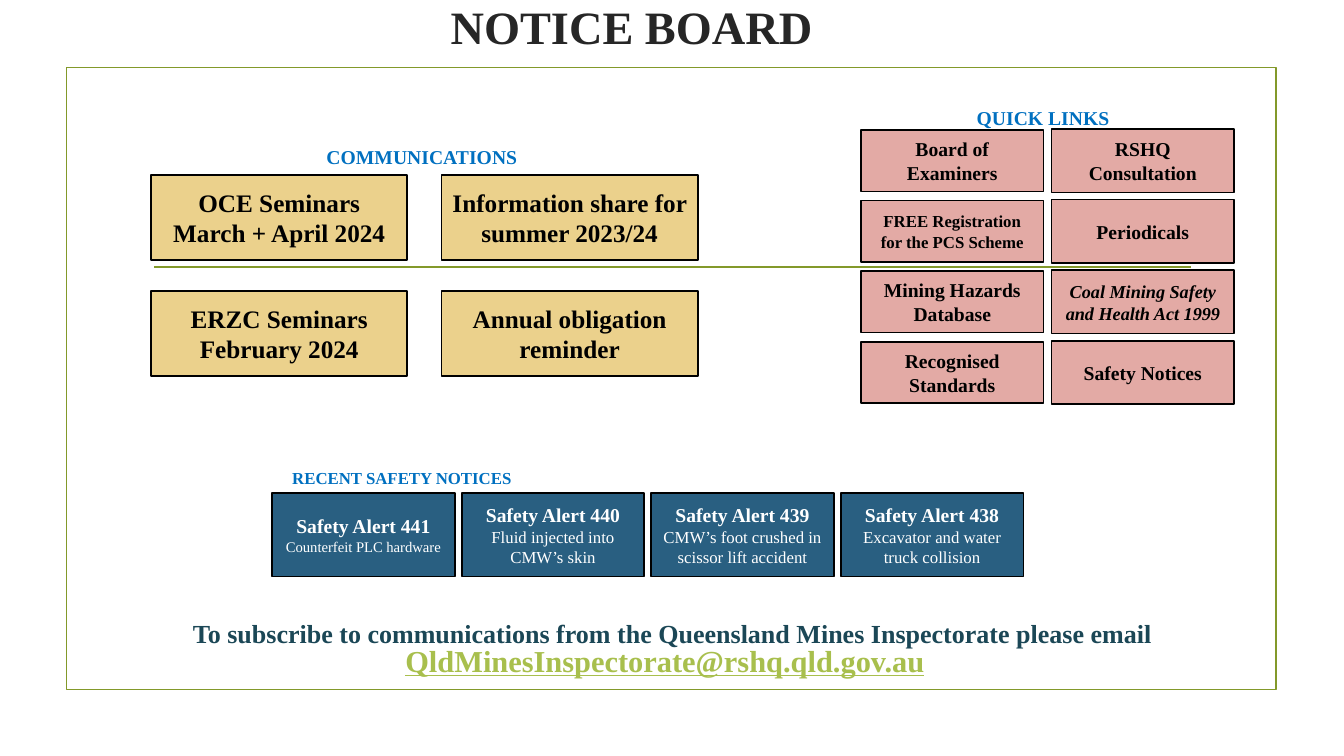
from pptx import Presentation
from pptx import util as u
from pptx.dml.color import RGBColor
from pptx.enum import shapes, text
from lxml import etree

BLACK = RGBColor(0, 0, 0)
WHITE = RGBColor(255, 255, 255)
CHARCOAL = RGBColor(0x26, 0x26, 0x26)
OLIVE = RGBColor(0x83, 0x99, 0x2A)
LIME = RGBColor(0xA8, 0xBF, 0x4D)
BLUE = RGBColor(0, 0x70, 0xC0)
TEAL = RGBColor(0x1B, 0x47, 0x56)
NAVY = RGBColor(0x29, 0x5F, 0x81)
SAND = RGBColor(0xEB, 0xD1, 0x8C)
PINK = RGBColor(0xE3, 0xAA, 0xA5)

RECT = shapes.MSO_SHAPE.RECTANGLE
BUTTON = shapes.MSO_SHAPE.ACTION_BUTTON_CUSTOM
LEFT, CENTER = text.PP_ALIGN.LEFT, text.PP_ALIGN.CENTER
PX = 9144  # 100 px to the inch
A = "http://schemas.openxmlformats.org/drawingml/2006/main"


class Board:
    font = "Times New Roman"
    line_width = u.Pt(1.25)

    def __init__(self, prs):
        self.s = prs.slides.add_slide(prs.slide_layouts[6])

    def fill_text(self, tf, paras, align=CENTER, spacing=None):
        """Fill a frame from (text, size, colour, extra font values) tuples."""
        tf.word_wrap = True
        for i, (words, size, color, extra) in enumerate(paras):
            p = tf.add_paragraph() if i else tf.paragraphs[0]
            p.alignment = align
            if spacing:
                p.line_spacing = spacing
            r = p.add_run()
            r.text = words
            fmt = {"name": self.font, "size": u.Pt(size), "bold": True, **extra}
            for key, value in fmt.items():
                setattr(r.font, key, value)
            r.font.color.rgb = color

    def label(self, box, paras, align=CENTER, spacing=None):
        sp = self.s.shapes.add_textbox(*(v * PX for v in box))
        self.fill_text(sp.text_frame, paras, align, spacing)
        return sp

    def box(self, kind, box, fill=None, line=BLACK, paras=()):
        sp = self.s.shapes.add_shape(kind, *(v * PX for v in box))
        sp.shadow.inherit = False
        if fill is None:
            sp.fill.background()
        else:
            sp.fill.solid()
            sp.fill.fore_color.rgb = fill
        sp.line.color.rgb = line
        sp.line.width = self.line_width
        sp.text_frame.vertical_anchor = text.MSO_ANCHOR.MIDDLE
        self.fill_text(sp.text_frame, paras)

    def rule(self, x1, y1, x2, y2, color):
        c = self.s.shapes.add_connector(
            shapes.MSO_CONNECTOR.STRAIGHT, *(v * PX for v in (x1, y1, x2, y2)))
        c.line.color.rgb = color
        c.line.width = self.line_width
        etree.SubElement(c._element.spPr, f"{{{A}}}effectLst")


COMMUNICATIONS = [
    ["OCE Seminars March + April 2024", "Information share for summer 2023/24"],
    ["ERZC Seminars February 2024", "Annual obligation reminder"],
]
QUICK_LINKS = [
    [("Board of Examiners", 14, {}), ("RSHQ Consultation", 14, {})],
    [("FREE Registration for the PCS Scheme", 12, {}), ("Periodicals", 14, {})],
    [("Mining Hazards Database", 14, {}),
     ("Coal Mining Safety and Health Act 1999", 13, {"italic": True})],
    [("Recognised Standards", 14, {}), ("Safety Notices", 14, {})],
]
ALERTS = [
    ("Safety Alert 441", "Counterfeit PLC hardware", 10.5),
    ("Safety Alert 440", "Fluid injected into CMW’s skin", 12),
    ("Safety Alert 439", "CMW’s foot crushed in scissor lift accident", 12),
    ("Safety Alert 438", "Excavator and water truck collision", 12),
]


def main():
    prs = Presentation()
    prs.slide_width, prs.slide_height = u.Inches(13.33), u.Inches(7.5)
    b = Board(prs)

    b.box(RECT, (66, 67, 1200, 617), line=OLIVE)
    b.rule(153, 265, 1181, 265, OLIVE)
    b.label((431, 0, 391, 80), [("NOTICE BOARD", 33.1, CHARCOAL, {})], spacing=0.9)

    b.label((314, 139, 220, 36), [("COMMUNICATIONS", 14, BLUE, {})], LEFT)
    for i, row in enumerate(COMMUNICATIONS):
        for j, words in enumerate(row):
            b.box(RECT, (150 + 288 * j, 174 + 115 * i, 254, 84), SAND,
                  paras=[(words, 18, BLACK, {})])

    b.label((944, 103, 181, 33), [("QUICK LINKS", 14, BLUE, {})], spacing=0.9)
    for i, row in enumerate(QUICK_LINKS):
        for j, (words, size, extra) in enumerate(row):
            b.box(BUTTON if j or i == 3 else RECT,
                  (854 + 189 * j, 129 + 70 * i - j, 181, 61 + 2 * j), PINK,
                  paras=[(words, size, BLACK, extra)])

    b.label((280, 459, 279, 36), [("RECENT SAFETY NOTICES", 12, BLUE, {})], LEFT)
    for i, (name, summary, size) in enumerate(ALERTS):
        b.box(BUTTON, (270 + 188 * i, 489, 181, 83), NAVY,
              paras=[(name, 14, WHITE, {}), (summary, size, WHITE, {"bold": False})])

    sp = b.label((68, 614, 1198, 69), [
        ("To subscribe to communications from the Queensland Mines Inspectorate"
         " please email", 18.6, TEAL, {}),
        ("QldMinesInspectorate@rshq.qld.gov.au", 21.7, LIME, {"underline": True}),
    ], spacing=0.8)
    # A right indent sets the address slightly left of centre
    sp.text_frame.paragraphs[1]._p.get_or_add_pPr().set("marR", str(15 * PX))

    prs.save("out.pptx")


if __name__ == "__main__":
    main()
